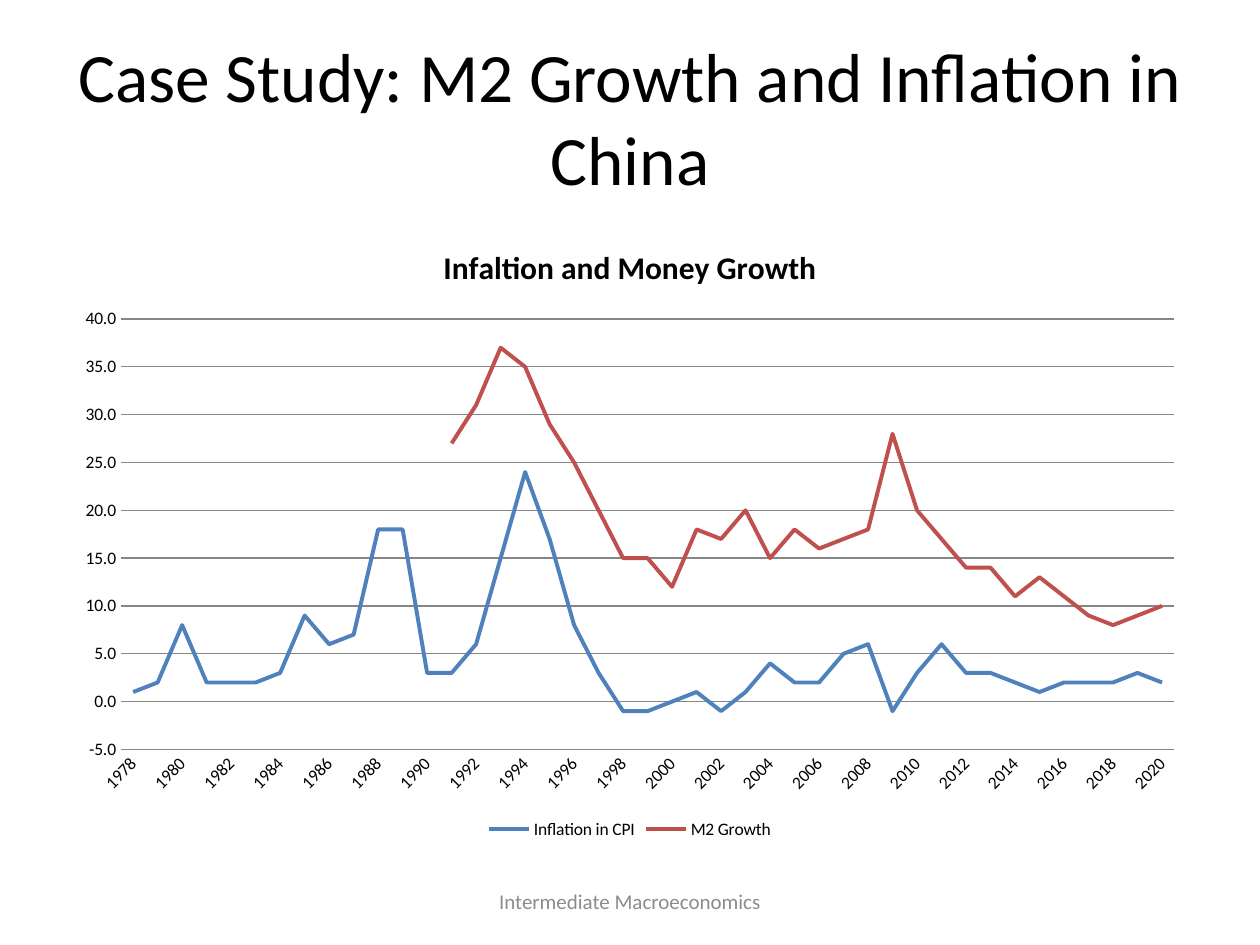
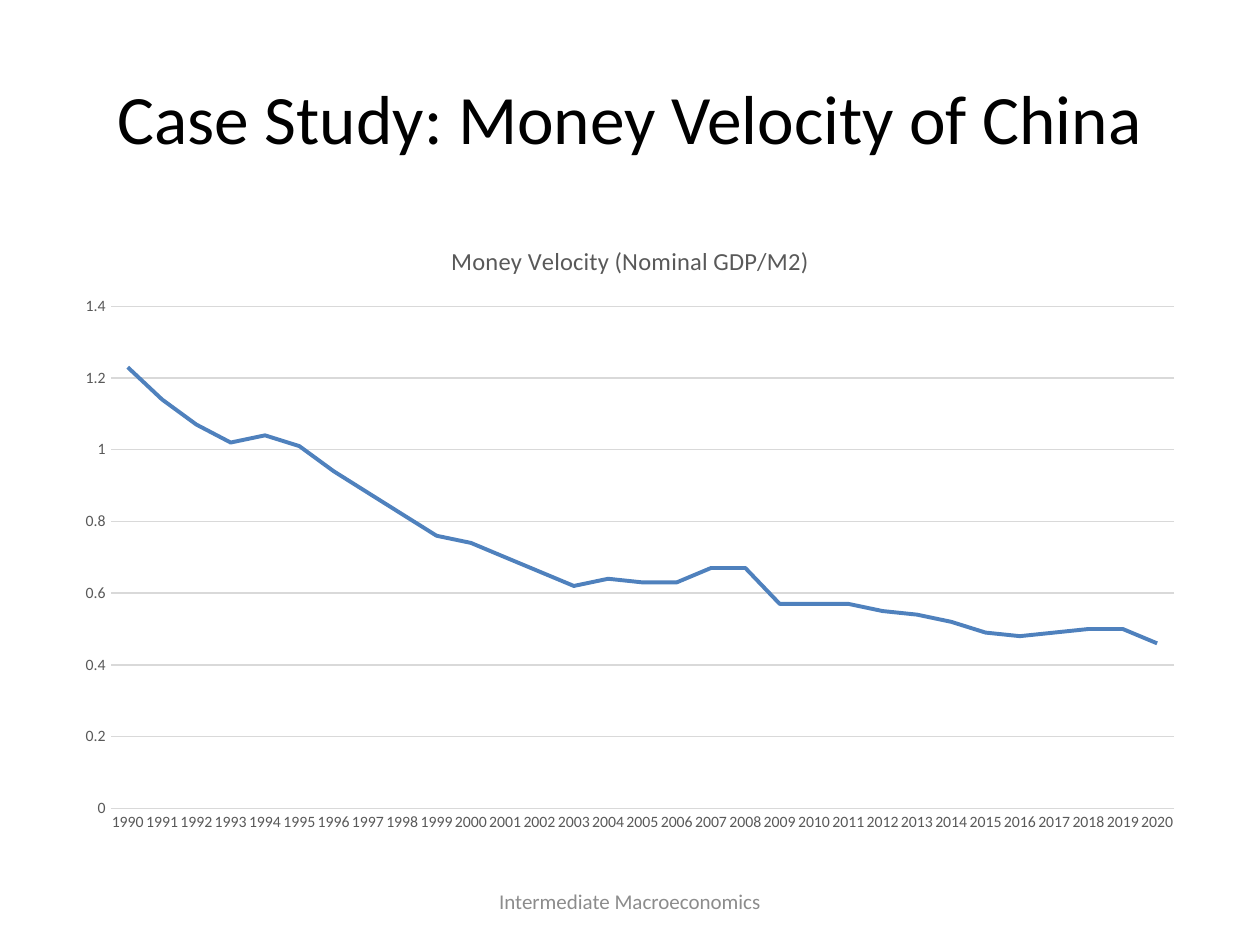
from pptx import Presentation
from pptx import util as u
from pptx.chart.data import CategoryChartData
from pptx.dml.color import RGBColor
from pptx.enum import chart as charts, text

BLACK = RGBColor(0x00, 0x00, 0x00)
FOOTER_GRAY = RGBColor(0x8C, 0x8C, 0x8C)
LABEL_GRAY = RGBColor(0x59, 0x59, 0x59)
GRID_DARK = RGBColor(0x86, 0x86, 0x86)
GRID_LIGHT = RGBColor(0xD9, 0xD9, 0xD9)
BLUE = RGBColor(0x4F, 0x81, 0xBD)
RED = RGBColor(0xC0, 0x50, 0x4D)
FONT = "Calibri"

presentation = Presentation()
presentation.slide_width = u.Inches(10)
presentation.slide_height = u.Inches(7.5)
column = presentation.slide_width // 20
row = presentation.slide_height // 150

TITLE_AREA = (column, 6 * row, 18 * column, 25 * row)
CHART_AREA = (column, 35 * row, 18 * column, 99 * row)
FOOTER_AREA = (7 * column, 139 * row, 6 * column, 8 * row)

inflation = [
    1, 2, 8, 2, 2, 2, 3, 9, 6, 7, 18, 18, 3, 3, 6, 15, 24, 17, 8, 3, -1, -1, 0,
    1, -1, 1, 4, 2, 2, 5, 6, -1, 3, 6, 3, 3, 2, 1, 2, 2, 2, 3, 2,
]
money_growth = [None] * 13 + [
    27, 31, 37, 35, 29, 25, 20, 15, 15, 12, 18, 17, 20, 15, 18, 16, 17, 18, 28,
    20, 17, 14, 14, 11, 13, 11, 9, 8, 9, 10,
]
velocity = [
    1.23, 1.14, 1.07, 1.02, 1.04, 1.01, 0.94, 0.88, 0.82, 0.76, 0.74, 0.7, 0.66,
    0.62, 0.64, 0.63, 0.63, 0.67, 0.67, 0.57, 0.57, 0.57, 0.55, 0.54, 0.52, 0.49,
    0.48, 0.49, 0.5, 0.5, 0.46,
]

case_studies = [
    {
        "title": "Case Study: M2 Growth and Inflation in China",
        "chart_title": "Infaltion and Money Growth",
        "title_font": {"size": u.Pt(18), "bold": True, "color": BLACK},
        "label_font": {"size": u.Pt(10), "color": BLACK},
        "grid": GRID_DARK,
        "first_year": 1978,
        "series": {"Inflation in CPI": inflation, "M2 Growth": money_growth},
        "scale": {"minimum_scale": -5, "maximum_scale": 40, "major_unit": 5},
        "number_format": "0.0",
        "label_step": 2,
        "rotation": -45,
        "legend": True,
    },
    {
        "title": "Case Study: Money Velocity of China",
        "chart_title": "Money Velocity (Nominal GDP/M2)",
        "title_font": {"size": u.Pt(14), "bold": False, "color": LABEL_GRAY},
        "label_font": {"size": u.Pt(9), "color": LABEL_GRAY},
        "grid": GRID_LIGHT,
        "first_year": 1990,
        "series": {"Series 1": velocity},
        "scale": {"minimum_scale": 0, "maximum_scale": 1.4, "major_unit": 0.2},
        "number_format": "General",
        "label_step": 1,
        "rotation": 0,
        "legend": False,
    },
]


def format_font(font, values):
    font.name = FONT
    for name, value in values.items():
        if name == "color":
            font.color.rgb = value
        else:
            setattr(font, name, value)


def add_centred_text(slide, area, wording, values):
    frame = slide.shapes.add_textbox(*area).text_frame
    frame.word_wrap = True
    frame.vertical_anchor = text.MSO_ANCHOR.MIDDLE
    paragraph = frame.paragraphs[0]
    paragraph.alignment = text.PP_ALIGN.CENTER
    run = paragraph.add_run()
    run.text = wording
    format_font(run.font, values)


for study in case_studies:
    slide = presentation.slides.add_slide(presentation.slide_layouts[6])
    add_centred_text(slide, TITLE_AREA, study["title"], {"size": u.Pt(39.6), "color": BLACK})
    add_centred_text(slide, FOOTER_AREA, "Intermediate Macroeconomics",
                     {"size": u.Pt(12), "color": FOOTER_GRAY})

    chart_data = CategoryChartData(number_format=study["number_format"])
    chart_data.categories = [str(year) for year in range(study["first_year"], 2021)]
    for name, values in study["series"].items():
        chart_data.add_series(name, values)
    chart = slide.shapes.add_chart(charts.XL_CHART_TYPE.LINE, *CHART_AREA, chart_data).chart
    format_font(chart.font, study["label_font"])

    chart.has_title = True
    title_run = chart.chart_title.text_frame.paragraphs[0].add_run()
    title_run.text = study["chart_title"]
    format_font(title_run.font, study["title_font"])
    chart.chart_title.include_in_layout = False

    chart.has_legend = study["legend"]
    if chart.has_legend:
        chart.legend.position = charts.XL_LEGEND_POSITION.BOTTOM
        chart.legend.include_in_layout = False

    chart.plots[0].vary_by_categories = False
    for series, color in zip(chart.plots[0].series, (BLUE, RED)):
        series.smooth = False
        series.marker.style = charts.XL_MARKER_STYLE.NONE
        series.format.line.color.rgb = color
        series.format.line.width = u.Pt(2.25)

    year_axis, value_axis = chart.category_axis, chart.value_axis
    for axis in (year_axis, value_axis):
        axis.major_tick_mark = charts.XL_TICK_MARK.NONE
        axis.minor_tick_mark = charts.XL_TICK_MARK.NONE
        axis.tick_label_position = charts.XL_TICK_LABEL_POSITION.NEXT_TO_AXIS
        format_font(axis.tick_labels.font, study["label_font"])
    for name, value in study["scale"].items():
        setattr(value_axis, name, value)
    value_axis.crosses = charts.XL_AXIS_CROSSES.MINIMUM
    value_axis.tick_labels.number_format = study["number_format"]
    value_axis.tick_labels.number_format_is_linked = False
    value_axis.format.line.fill.background()
    year_axis.has_major_gridlines = False
    for line in (year_axis.format.line, value_axis.major_gridlines.format.line):
        line.color.rgb = study["grid"]
        line.width = u.Pt(0.75)

    axis_xml = year_axis._element
    axis_xml.txPr.bodyPr.set("rot", str(study["rotation"] * 60000))
    label_skip = axis_xml.makeelement(
        axis_xml.tag.replace("catAx", "tickLblSkip"), {"val": str(study["label_step"])})
    axis_xml.find("{*}noMultiLvlLbl").addprevious(label_skip)

presentation.save("out.pptx")
